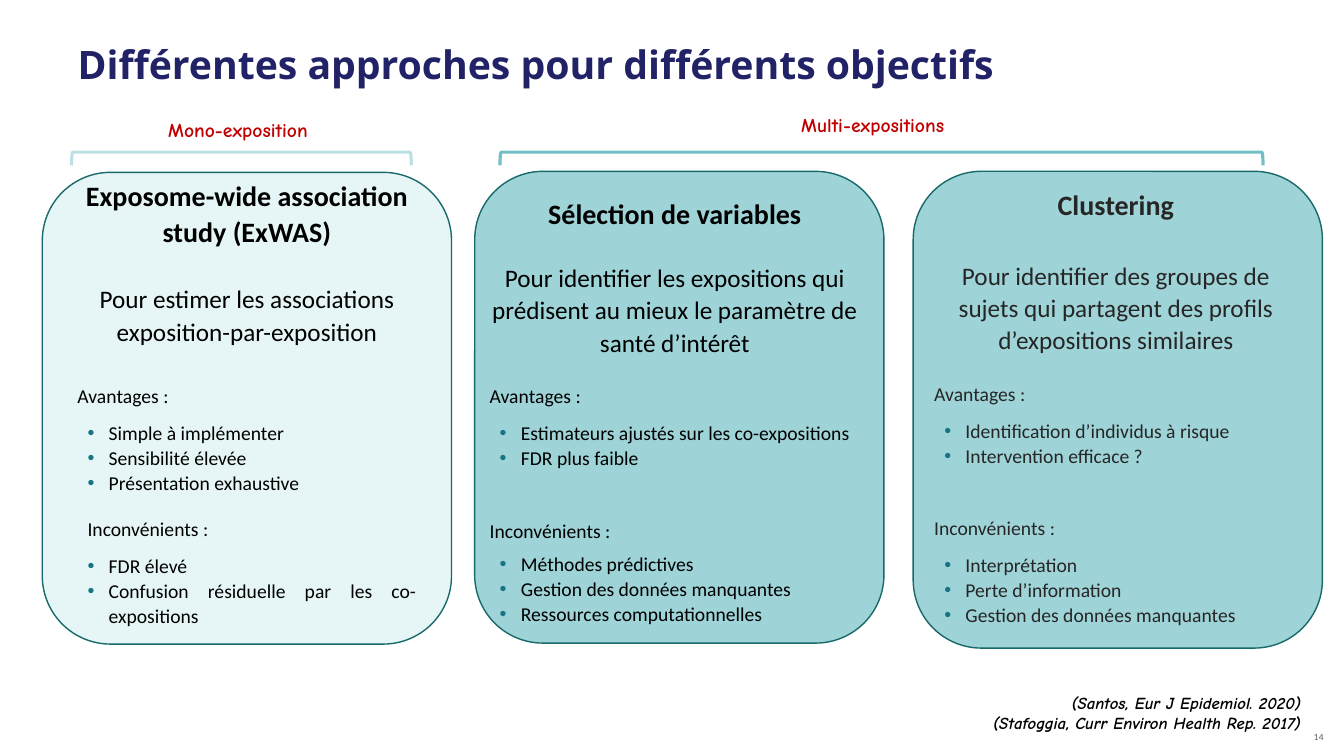
from dataclasses import dataclass

from lxml.etree import SubElement
from pptx import Presentation
from pptx.dml.color import RGBColor
from pptx.enum.shapes import MSO_SHAPE
from pptx.enum.text import MSO_ANCHOR, MSO_AUTO_SIZE, PP_ALIGN
from pptx.oxml.ns import qn
from pptx.slide import Slide
from pptx.text.text import TextFrame
from pptx.util import Emu, Inches, Pt

SLIDE_WIDTH, SLIDE_HEIGHT = Emu(12192000), Inches(7.5)
COLUMNS, ROWS = 160, 90


@dataclass(frozen=True)
class Theme:
    title: str = "222267"
    accent: str = "C00000"
    text: str = "000000"
    soft_text: str = "262626"
    page: str = "595959"
    outline: str = "186969"
    bullet: str = "177385"
    pale: str = "E6F6F6"
    teal: str = "9ED3D7"
    title_font: str = "Open Sans"
    body_font: str = "Calibri"
    hand_font: str = "Comic Neue"
    page_font: str = "Lato"
    title_size: int = 28
    heading_size: int = 20
    goal_size: int = 18
    body_size: int = 14
    reference_size: int = 12
    page_size: int = 6
    line_spacing: float = 1.07


THEME = Theme()


@dataclass(frozen=True)
class Area:
    """A rectangle in grid columns and rows."""
    left: float
    top: float
    width: float
    height: float

    def box(self) -> tuple[Emu, Emu, Emu, Emu]:
        return (Emu(round(self.left * SLIDE_WIDTH / COLUMNS)), Emu(round(self.top * SLIDE_HEIGHT / ROWS)),
                Emu(round(self.width * SLIDE_WIDTH / COLUMNS)), Emu(round(self.height * SLIDE_HEIGHT / ROWS)))


@dataclass(frozen=True)
class Style:
    font: str
    size: int
    color: str
    bold: bool = False
    italic: bool = False


@dataclass(frozen=True)
class Group:
    heading: str
    items: tuple[str, ...]
    gap_above: float
    gap_below: float = 8
    indent: float = 0


@dataclass(frozen=True)
class Card:
    frame: Area
    text_area: Area
    fill: str
    color: str
    heading: str
    goal: str
    goal_gap: float
    groups: tuple[Group, ...]


@dataclass(frozen=True)
class Exposure:
    label: str
    label_area: Area
    bracket: Area
    color: str


CARDS = (
    Card(Area(5.04, 20.52, 48.72, 56.16), Area(8.04, 20.4, 42.72, 54.72), THEME.pale, THEME.text,
         "Exposome-wide association study (ExWAS)",
         "Pour estimer les associations exposition-par-exposition", 23.8,
         (Group("Avantages :", ("Simple à implémenter", "Sensibilité élevée", "Présentation exhaustive"), 26.1),
          Group("Inconvénients :", ("FDR élevé", "Confusion résiduelle par les co-expositions"), 15.1, indent=0.1))),
    Card(Area(56.52, 20.4, 48.72, 56.16), Area(57.12, 22.56, 46.44, 53.28), THEME.teal, THEME.text,
         "Sélection de variables",
         "Pour identifier les expositions qui prédisent au mieux le paramètre de santé d’intérêt", 21.2,
         (Group("Avantages :", ("Estimateurs ajustés sur les co-expositions", "FDR plus faible"), 18.3),
          Group("Inconvénients :", ("Méthodes prédictives", "Gestion des données manquantes",
                                    "Ressources computationnelles"), 33.9, 6))),
    Card(Area(108.72, 20.4, 48.72, 56.76), Area(110.04, 21.48, 45.6, 54.24), THEME.teal, THEME.soft_text,
         "Clustering",
         "Pour identifier des groupes de sujets qui partagent des profils d’expositions similaires", 26.1,
         (Group("Avantages :", ("Identification d’individus à risque", "Intervention efficace ?"), 18.3),
          Group("Inconvénients :", ("Interprétation", "Perte d’information",
                                    "Gestion des données manquantes"), 33.9))),
)

EXPOSURES = (
    Exposure("Mono-exposition", Area(18.84, 13.44, 21, 4.08), Area(8.52, 18.12, 40.44, 1.56), "BBE0E3"),
    Exposure("Multi-expositions", Area(94.2, 12.84, 25.8, 4.08), Area(59.52, 18.12, 90.84, 1.56), "72BFC5"),
)

REFERENCES = ("(Santos, Eur J Epidemiol. 2020)", "(Stafoggia, Curr Environ Health Rep. 2017)")


def add_line(frame: TextFrame, text: str, style: Style, align: PP_ALIGN = PP_ALIGN.LEFT,
             gap: float = 0, spacing: float = 1, indent: float = 0, bulleted: bool = False) -> None:
    """Write one paragraph, using the frame's empty first one if it is free."""
    first = frame.paragraphs[0]
    paragraph = frame.add_paragraph() if first.runs else first
    paragraph.alignment = align
    paragraph.line_spacing = spacing
    paragraph.space_before, paragraph.space_after = Pt(gap), Pt(0)
    properties = paragraph._p.get_or_add_pPr()
    if bulleted:
        properties.set("marL", str(Inches(0.31)))
        properties.set("indent", str(Inches(-0.21)))
        color = SubElement(properties, qn("a:buClr"))
        SubElement(color, qn("a:srgbClr")).set("val", THEME.bullet)
        SubElement(properties, qn("a:buFont")).set("typeface", "Arial")
        SubElement(properties, qn("a:buChar")).set("char", "•")
    elif indent:
        properties.set("marL", str(Inches(indent)))
    run = paragraph.add_run()
    run.text = text
    run.font.name, run.font.size = style.font, Pt(style.size)
    run.font.bold, run.font.italic = style.bold, style.italic
    run.font.color.rgb = RGBColor.from_string(style.color)


def add_text_area(slide: Slide, area: Area) -> TextFrame:
    frame = slide.shapes.add_textbox(*area.box()).text_frame
    frame.word_wrap = True
    return frame


def draw_title(slide: Slide, text: str) -> None:
    title = slide.shapes.title
    title.left, title.top, title.width, title.height = Area(8.04, 0.12, 144, 15).box()
    frame = title.text_frame
    frame.vertical_anchor, frame.auto_size = MSO_ANCHOR.MIDDLE, MSO_AUTO_SIZE.NONE
    add_line(frame, text, Style(THEME.title_font, THEME.title_size, THEME.title, bold=True))


def draw_card(slide: Slide, card: Card) -> None:
    shape = slide.shapes.add_shape(MSO_SHAPE.ROUNDED_RECTANGLE, *card.frame.box())
    shape.shadow.inherit = False
    shape.fill.solid()
    shape.fill.fore_color.rgb = RGBColor.from_string(card.fill)
    shape.line.color.rgb = RGBColor.from_string(THEME.outline)
    shape.line.width = Pt(1)

    frame = add_text_area(slide, card.text_area)
    spacing = THEME.line_spacing
    body = Style(THEME.body_font, THEME.body_size, card.color)
    add_line(frame, card.heading, Style(THEME.body_font, THEME.heading_size, card.color, bold=True),
             PP_ALIGN.CENTER, spacing=spacing)
    add_line(frame, card.goal, Style(THEME.body_font, THEME.goal_size, card.color),
             PP_ALIGN.CENTER, card.goal_gap, spacing)
    for group in card.groups:
        add_line(frame, group.heading, body, PP_ALIGN.JUSTIFY, group.gap_above, spacing, group.indent)
        for index, item in enumerate(group.items):
            gap = 0 if index else group.gap_below
            add_line(frame, item, body, PP_ALIGN.JUSTIFY, gap, spacing, bulleted=True)


def draw_exposure(slide: Slide, exposure: Exposure) -> None:
    style = Style(THEME.hand_font, THEME.body_size, THEME.accent, bold=True)
    add_line(add_text_area(slide, exposure.label_area), exposure.label, style)
    # A left bracket turned a quarter: its height becomes the span
    left, top, span, depth = exposure.bracket.box()
    shift = (span - depth) // 2
    bracket = slide.shapes.add_shape(MSO_SHAPE.LEFT_BRACKET, left + shift, top - shift, depth, span)
    bracket.rotation = 90
    bracket.shadow.inherit = False
    bracket.fill.background()
    bracket.line.color.rgb = RGBColor.from_string(exposure.color)
    bracket.line.width = Pt(2.25)


def main() -> None:
    presentation = Presentation()
    presentation.slide_width, presentation.slide_height = SLIDE_WIDTH, SLIDE_HEIGHT
    slide = presentation.slides.add_slide(presentation.slide_layouts.get_by_name("Title Only"))
    draw_title(slide, "Différentes approches pour différents objectifs")

    # Approaches and the exposure families above them
    for card in CARDS:
        draw_card(slide, card)
    for exposure in EXPOSURES:
        draw_exposure(slide, exposure)

    # References and page number
    references = add_text_area(slide, Area(110.52, 81.84, 45.6, 6))
    for reference in REFERENCES:
        add_line(references, reference,
                 Style(THEME.hand_font, THEME.reference_size, THEME.text, bold=True, italic=True), PP_ALIGN.RIGHT)
    page = add_text_area(slide, Area(148.56, 86.52, 10.2, 3.4))
    add_line(page, "14", Style(THEME.page_font, THEME.page_size, THEME.page), PP_ALIGN.RIGHT)
    presentation.save("out.pptx")


if __name__ == "__main__":
    main()
